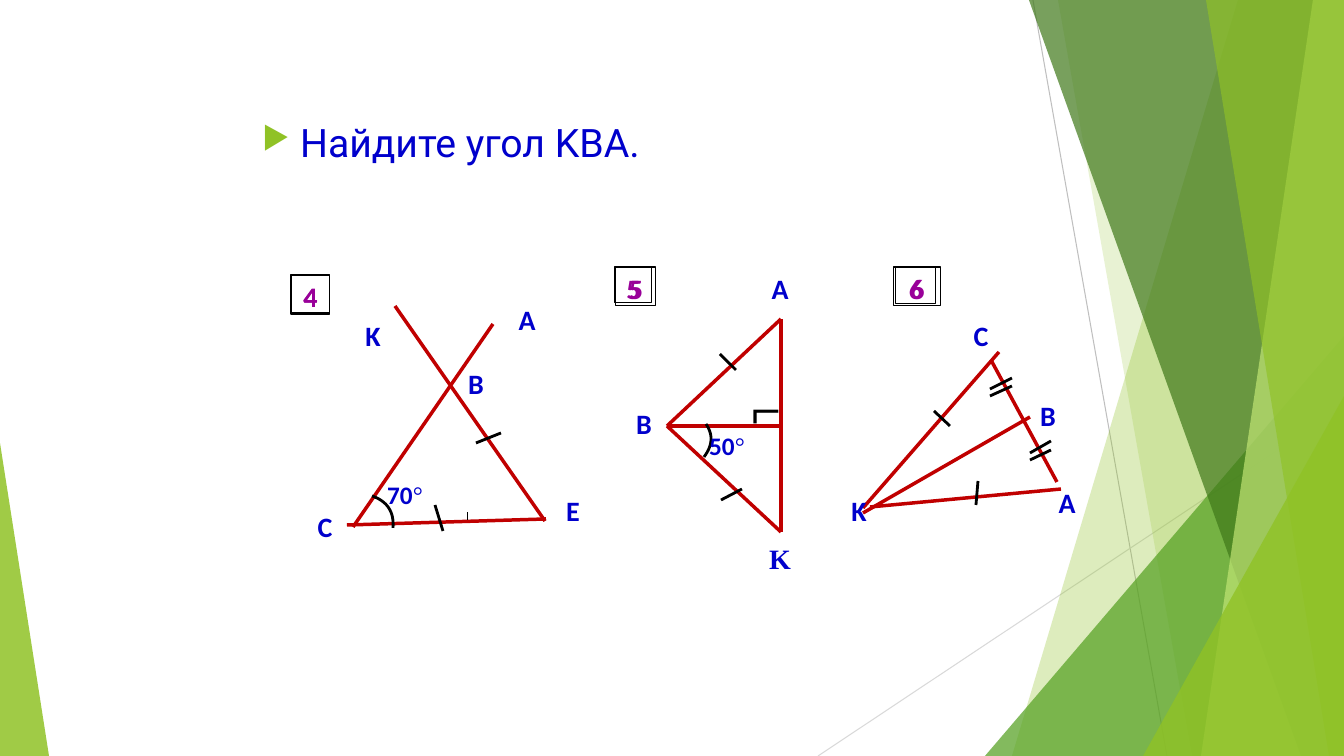
from lxml.etree import SubElement
from pptx import Presentation
from pptx.dml.color import RGBColor
from pptx.enum.shapes import MSO_CONNECTOR, MSO_SHAPE
from pptx.enum.text import MSO_ANCHOR, PP_ALIGN
from pptx.oxml.ns import qn
from pptx.util import Pt

PX = 914400 / 100.8
WIDTH, HEIGHT = 1344, 756
COLORS = {
    "lime": "90C226", "green": "54A021", "forest": "3F7819", "pale": "C0E474",
    "gray": "BFBFBF", "silver": "D9D9D9", "blue": "0000CC", "purple": "990099",
    "red": "C00000", "black": "000000",
}


def px(length):
    return round(length * PX)


def color(name):
    return RGBColor.from_string(COLORS[name])


def set_font(font, size, face, tint, bold=False):
    font.size = Pt(size)
    font.name = face
    font.bold = bold
    font.color.rgb = color(tint)


def add_line(slide, ends, tint, weight):
    line = slide.shapes.add_connector(MSO_CONNECTOR.STRAIGHT, *map(px, ends))
    line.line.color.rgb = color(tint)
    line.line.width = Pt(weight)
    SubElement(line._element.spPr, qn("a:effectLst"))


def fill_facet(facet, tint, opacity):
    facet.shadow.inherit = False
    facet.line.fill.background()
    facet.fill.solid()
    facet.fill.fore_color.rgb = color(tint)
    solid = facet._element.spPr.find(qn("a:solidFill"))
    SubElement(solid[0], qn("a:alpha"), val=str(opacity * 1000))


def add_outline(slide, points, close):
    start, *rest = [(px(x), px(y)) for x, y in points]
    builder = slide.shapes.build_freeform(*start)
    builder.add_line_segments(rest, close=close)
    return builder.convert_to_shape()


def add_band(slide, top_x, bottom_x, tint, opacity):
    corners = [(top_x, 0), (WIDTH, 0), (WIDTH, HEIGHT), (bottom_x, HEIGHT)]
    fill_facet(add_outline(slide, corners, True), tint, opacity)


def add_triangle(slide, left, top, width, apex, tint, opacity):
    triangle = slide.shapes.add_shape(
        MSO_SHAPE.ISOSCELES_TRIANGLE, px(left), px(top), px(width), px(HEIGHT - top))
    triangle.adjustments[0] = apex
    fill_facet(triangle, tint, opacity)


def add_angle_arc(slide, start, control, end):
    steps = 16
    points = []
    for step in range(steps + 1):
        t = step / steps
        points.append([(1 - t) ** 2 * a + 2 * t * (1 - t) * b + t ** 2 * c
                       for a, b, c in zip(start, control, end)])
    arc = add_outline(slide, points, False)
    arc.shadow.inherit = False
    arc.fill.background()
    arc.line.color.rgb = color("black")
    arc.line.width = Pt(2)


def add_text_box(slide, center_x, top, width, height):
    box = slide.shapes.add_textbox(
        px(center_x - width / 2), px(top), px(width), px(height))
    box.text_frame.word_wrap = True
    return box


def add_vertex(slide, letter, center_x, top, face="Calibri"):
    paragraph = add_text_box(slide, center_x, top, 44, 44).text_frame.paragraphs[0]
    paragraph.text = letter
    paragraph.alignment = PP_ALIGN.CENTER
    set_font(paragraph.font, 20, face, "blue", True)


def add_angle_value(slide, degrees, center_x, top):
    paragraph = add_text_box(slide, center_x, top, 64, 40).text_frame.paragraphs[0]
    paragraph.alignment = PP_ALIGN.CENTER
    for text, face, bold in ((degrees, "Calibri", True), ("°", "Times New Roman", False)):
        run = paragraph.add_run()
        run.text = text
        set_font(run.font, 18, face, "blue", bold)


def add_number_tile(slide, number, left, top, width, height):
    tile = slide.shapes.add_shape(MSO_SHAPE.RECTANGLE, *map(px, (left, top, width, height)))
    tile.shadow.inherit = False
    tile.fill.background()
    tile.line.color.rgb = color("black")
    tile.line.width = Pt(0.75)
    tile.text_frame.vertical_anchor = MSO_ANCHOR.TOP
    paragraph = tile.text_frame.paragraphs[0]
    paragraph.text = number
    paragraph.alignment = PP_ALIGN.CENTER
    set_font(paragraph.font, 20, "Calibri", "purple", True)


def add_right_angle(slide):
    mark = add_text_box(slide, 753, 365, 79, 57)
    mark.rotation = 270
    paragraph = mark.text_frame.paragraphs[0]
    paragraph.text = "┐"
    set_font(paragraph.font, 28, "Roboto", "black")


def add_task(slide):
    task = slide.shapes.title
    task.left, task.top, task.width, task.height = map(px, (252, 113, 420, 56))
    task.text_frame.vertical_anchor = MSO_ANCHOR.TOP
    paragraph = task.text_frame.paragraphs[0]
    paragraph.text = "Найдите угол KBA."
    paragraph.alignment = PP_ALIGN.LEFT
    properties = paragraph._p.get_or_add_pPr()
    properties.set("marL", str(px(38)))
    properties.set("indent", str(px(-38)))
    SubElement(SubElement(properties, qn("a:buClr")), qn("a:srgbClr"), val=COLORS["lime"])
    SubElement(properties, qn("a:buSzPct"), val="80000")
    SubElement(properties, qn("a:buChar"), char="▶")
    set_font(paragraph.font, 28, "Roboto", "blue")


def add_backdrop(slide):
    add_line(slide, (1033, 0, 1167, HEIGHT), "gray", 0.75)
    add_line(slide, (WIDTH, 406, 818, HEIGHT), "silver", 0.75)
    add_band(slide, 1238, 1012, "lime", 30)
    add_band(slide, 1058, 1192, "lime", 20)
    add_triangle(slide, 985, 336, 359, 1, "green", 72)
    add_band(slide, 1029, 1301, "forest", 70)
    add_band(slide, 1313, 1201, "pale", 70)
    add_band(slide, 1206, 1329, "lime", 65)
    add_triangle(slide, 1143, 396, 201, 1, "lime", 80)
    add_triangle(slide, 0, 443, 49, 0, "lime", 85)


def add_figure(slide, sides, ticks, vertices, tiles):
    for side in sides:
        add_line(slide, side, "red", 2.5)
    for tick in ticks:
        add_line(slide, tick, "black", 2)
    for vertex in vertices:
        add_vertex(slide, *vertex)
    for tile in tiles:
        add_number_tile(slide, *tile)


def main():
    deck = Presentation()
    deck.slide_width, deck.slide_height = px(WIDTH), px(HEIGHT)
    slide = deck.slides.add_slide(deck.slide_layouts[5])
    add_backdrop(slide)
    add_task(slide)

    add_figure(
        slide,
        sides=[(493, 324, 353, 527), (545, 521, 395, 306), (546, 519, 347, 525)],
        ticks=[(501, 433, 476, 443), (435, 505, 443, 531)],
        vertices=[("A", 527, 298), ("K", 373, 314), ("B", 476, 362),
                  ("E", 573, 489), ("C", 325, 505)],
        tiles=[("4", 291, 275, 39, 38), ("4", 291, 275, 39, 39)])
    add_line(slide, (468, 520, 468, 512), "black", 0.75)
    add_angle_arc(slide, (372, 496), (395, 504), (393, 528))
    add_angle_value(slide, "70", 405, 474)

    add_figure(
        slide,
        sides=[(781, 532, 781, 319), (667, 426, 781, 532),
               (667, 426, 781, 319), (667, 426, 781, 426)],
        ticks=[(736, 370, 720, 354), (742, 489, 721, 500)],
        vertices=[("A", 780, 267), ("K", 780, 537, "Times New Roman"), ("B", 644, 402)],
        tiles=[("5", 615, 267, 37, 36), ("5", 616, 267, 40, 39)])
    add_angle_arc(slide, (706, 424), (717, 440), (704, 457))
    add_angle_value(slide, "50", 727, 425)
    add_right_angle(slide)

    add_figure(
        slide,
        sides=[(1057, 482, 991, 360), (870, 507, 1061, 489),
               (863, 508, 999, 352), (863, 513, 1030, 417)],
        ticks=[(934, 411, 950, 426), (978, 481, 976, 505),
               (1012, 378, 990, 389), (1012, 386, 990, 396),
               (1051, 441, 1030, 453), (1051, 450, 1030, 460)],
        vertices=[("B", 1048, 394), ("C", 981, 314), ("A", 1067, 481), ("K", 859, 489)],
        tiles=[("6", 896, 267, 40, 37), ("6", 894, 267, 47, 39)])

    deck.save("out.pptx")


if __name__ == "__main__":
    main()
